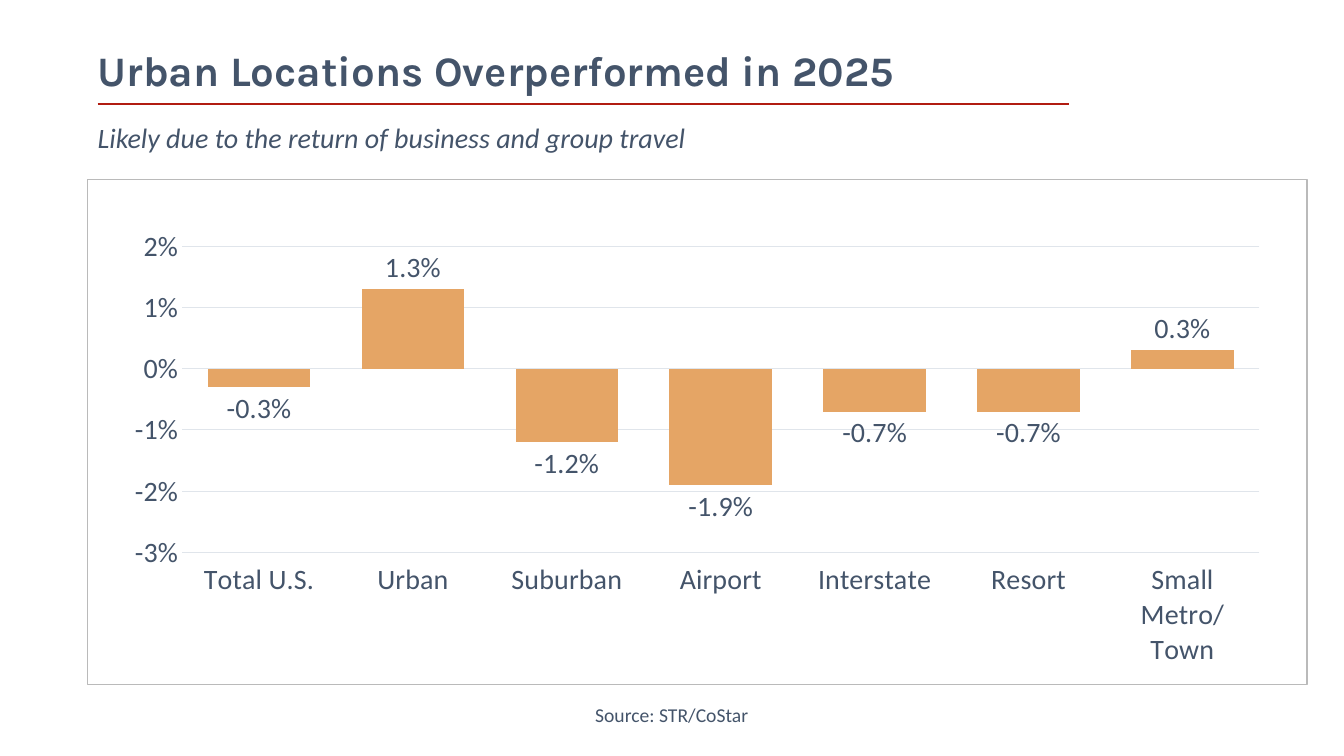
import dataclasses

import lxml.etree
import pptx
import pptx.chart.data
import pptx.dml.color
import pptx.enum.chart
import pptx.enum.shapes
import pptx.enum.text
import pptx.oxml
import pptx.oxml.ns
import pptx.util

Cm = pptx.util.Cm
Pt = pptx.util.Pt
qn = pptx.oxml.ns.qn


@dataclasses.dataclass
class Theme:
    ink: str = "44546A"
    rule: str = "B11C11"
    frame: str = "BABABA"
    grid: str = "E0E5EB"
    bar: str = "E5A565"
    heading_font: str = "Karla"
    body_font: str = "Calibri"
    heading_size: int = 30
    body_size: int = 20
    source_size: int = 14


def color(value):
    return pptx.dml.color.RGBColor.from_string(value)


class SlideBuilder:
    def __init__(self, theme, slide):
        self.theme = theme
        self.slide = slide

    def style_font(self, font, size, name=None):
        font.name = name or self.theme.body_font
        font.size = Pt(size)
        font.color.rgb = color(self.theme.ink)

    def style_line(self, line, value, width):
        line.color.rgb = color(value)
        line.width = Pt(width)

    def text(self, box, words, size, font_name=None, bold=False, italic=False,
             align=pptx.enum.text.PP_ALIGN.LEFT, anchor=pptx.enum.text.MSO_ANCHOR.TOP,
             inset=0.13, indent=0, line_spacing=1.0):
        shape = self.slide.shapes.add_textbox(*map(Cm, box))
        frame = shape.text_frame
        frame.word_wrap = True
        frame.vertical_anchor = anchor
        frame.margin_top = frame.margin_bottom = Cm(inset)
        paragraph = frame.paragraphs[0]
        paragraph.text = words
        paragraph.alignment = align
        paragraph.line_spacing = line_spacing
        paragraph._p.get_or_add_pPr().set("marL", str(Cm(indent)))
        self.style_font(paragraph.font, size, font_name)
        paragraph.font.bold = bold
        paragraph.font.italic = italic

    def rule(self, left, right, top):
        connector = self.slide.shapes.add_connector(
            pptx.enum.shapes.MSO_CONNECTOR.STRAIGHT, Cm(left), Cm(top), Cm(right), Cm(top))
        self.style_line(connector.line, self.theme.rule, 1)
        lxml.etree.SubElement(connector._element.spPr, qn("a:effectLst"))

    def frame(self, box):
        shape = self.slide.shapes.add_shape(
            pptx.enum.shapes.MSO_SHAPE.RECTANGLE, *map(Cm, box))
        shape.shadow.inherit = False
        shape.fill.background()
        self.style_line(shape.line, self.theme.frame, 1)

    def column_chart(self, box, values, plot_area):
        data = pptx.chart.data.CategoryChartData(number_format="0.0%")
        data.categories = list(values)
        data.add_series("Series 1", list(values.values()))
        chart = self.slide.shapes.add_chart(
            pptx.enum.chart.XL_CHART_TYPE.COLUMN_CLUSTERED, *map(Cm, box), data).chart
        chart.has_legend = False
        chart.has_title = False
        self.style_font(chart.font, self.theme.body_size)
        self.style_axes(chart)
        self.style_columns(chart.plots[0])
        self.place_plot(chart, plot_area)

    def style_axes(self, chart):
        for axis in (chart.category_axis, chart.value_axis):
            axis.major_tick_mark = pptx.enum.chart.XL_TICK_MARK.NONE
            axis.minor_tick_mark = pptx.enum.chart.XL_TICK_MARK.NONE
            self.style_font(axis.tick_labels.font, self.theme.body_size)
        categories, scale = chart.category_axis, chart.value_axis
        categories.tick_label_position = pptx.enum.chart.XL_TICK_LABEL_POSITION.LOW
        self.style_line(categories.format.line, self.theme.grid, 0.75)
        scale.minimum_scale = -0.03
        scale.maximum_scale = 0.02
        scale.major_unit = 0.01
        scale.format.line.fill.background()
        scale.has_major_gridlines = True
        self.style_line(scale.major_gridlines.format.line, self.theme.grid, 0.75)
        scale.tick_labels.number_format = "0%"
        scale.tick_labels.number_format_is_linked = False

    def style_columns(self, plot):
        plot.vary_by_categories = False
        plot.gap_width = 50
        plot.overlap = -27
        series = plot.series[0]
        series.invert_if_negative = False
        series.format.fill.solid()
        series.format.fill.fore_color.rgb = color(self.theme.bar)
        labels = series.data_labels
        labels.show_value = True
        labels.position = pptx.enum.chart.XL_LABEL_POSITION.OUTSIDE_END
        labels.number_format = "0.0%"
        labels.number_format_is_linked = False
        self.style_font(labels.font, self.theme.body_size)

    def place_plot(self, chart, plot_area):
        area = chart._chartSpace.chart.plotArea
        for layout in area.findall(qn("c:layout")):
            area.remove(layout)
        layout = pptx.oxml.parse_xml(
            f'<c:layout {pptx.oxml.ns.nsdecls("c")}><c:manualLayout/></c:layout>')
        area.insert(0, layout)
        settings = [("layoutTarget", "inner"), ("xMode", "edge"), ("yMode", "edge")]
        settings += zip("xywh", plot_area)
        for name, value in settings:
            lxml.etree.SubElement(layout[0], qn(f"c:{name}")).set("val", str(value))


def main():
    presentation = pptx.Presentation()
    presentation.slide_width = Cm(33.87)
    presentation.slide_height = Cm(19.05)
    theme = Theme()
    builder = SlideBuilder(theme, presentation.slides.add_slide(presentation.slide_layouts[6]))

    builder.rule(2.46, 26.95, 2.62)
    builder.text((2.06, 0.56, 24.89, 1.93), "Urban Locations Overperformed in 2025",
                 theme.heading_size, theme.heading_font, bold=True,
                 inset=0.25, indent=0.15, line_spacing=1.25)
    builder.text((10.06, 17.58, 13.74, 0.86), "Source: STR/CoStar", theme.source_size,
                 align=pptx.enum.text.PP_ALIGN.CENTER)
    builder.text((2.21, 2.69, 27.66, 1.65),
                 "Likely due to the return of business and group travel", theme.body_size,
                 italic=True, anchor=pptx.enum.text.MSO_ANCHOR.MIDDLE, line_spacing=0.9)
    builder.frame((2.21, 4.52, 30.73, 12.73))
    performance = {
        "Total U.S.": -0.003,
        "Urban": 0.013,
        "Suburban": -0.012,
        "Airport": -0.019,
        "Interstate": -0.007,
        "Resort": -0.007,
        "Small Metro/Town": 0.003,
    }
    builder.column_chart((2.82, 5.51, 29.51, 11.53), performance, (0.06, 0.06, 0.92, 0.67))
    presentation.save("out.pptx")


if __name__ == "__main__":
    main()
